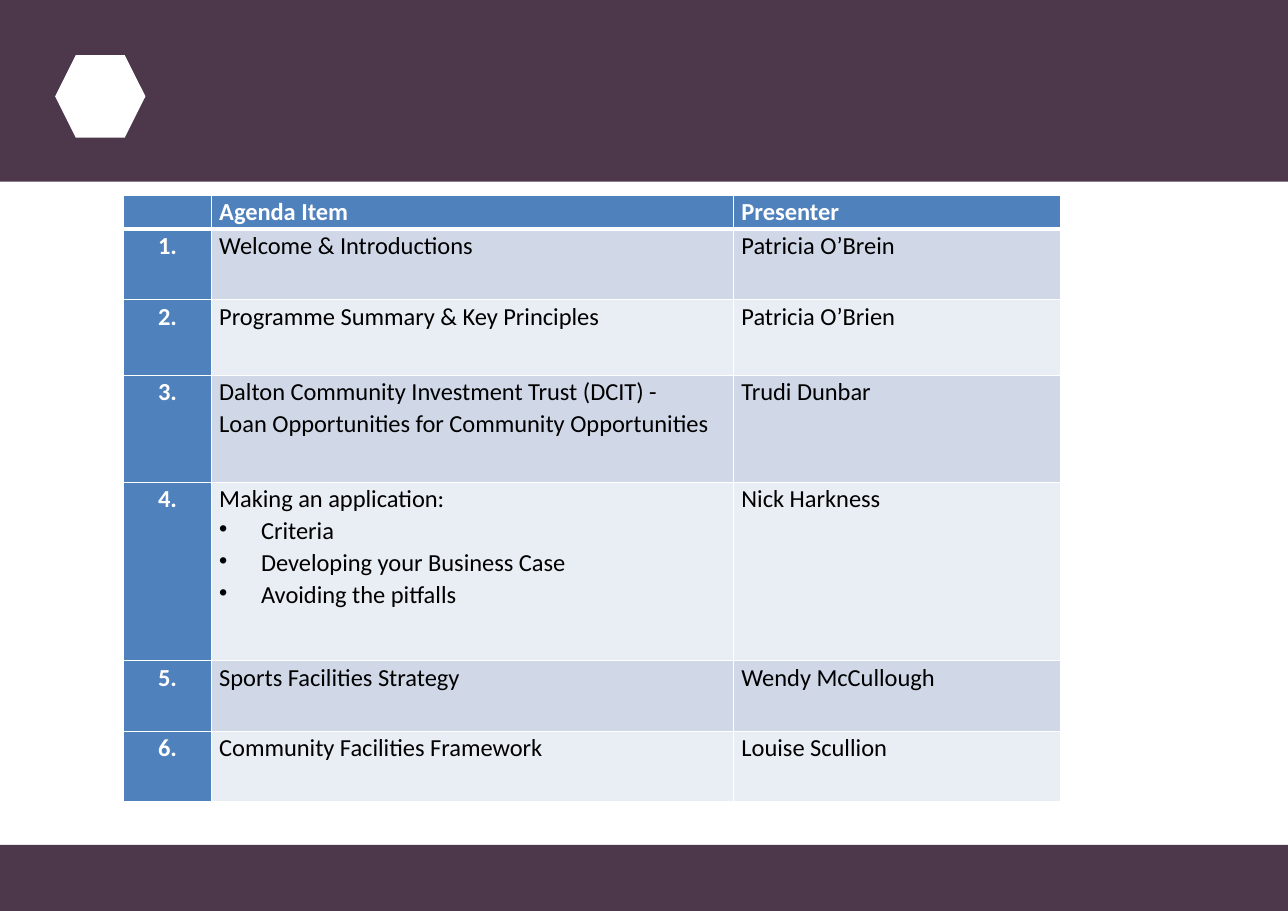
"""Build the agenda slide with its purple bands and presenter table."""
from dataclasses import dataclass
from typing import NamedTuple

from lxml import etree
from pptx import Presentation
from pptx import util as u
from pptx.dml.color import RGBColor
from pptx.enum import shapes, text
from pptx.oxml.ns import qn


@dataclass(frozen=True)
class Theme:
    plum: str = "4C374B"
    blue: str = "4F81BD"
    dark_row: str = "D0D8E8"
    light_row: str = "E9EDF4"
    white: str = "FFFFFF"
    black: str = "000000"
    font: str = "Calibri"
    size: int = 16
    line_spacing: float = 1.07
    thin: int = 1
    thick: int = 3


class Block(NamedTuple):
    preset: shapes.MSO_SHAPE
    left: float
    top: float
    width: float
    height: float
    color: str


class AgendaItem(NamedTuple):
    lines: list[str]
    presenter: str
    height: float
    bullets: list[str] = []


THEME = Theme()
WIDTH, HEIGHT = 11.69, 8.27
HEADER_HEIGHT = 0.31
COLUMN_WIDTHS = [0.8, 4.74, 2.97]

BLOCKS = [
    Block(shapes.MSO_SHAPE.RECTANGLE, 0, 0, WIDTH, 1.65, THEME.plum),
    Block(shapes.MSO_SHAPE.HEXAGON, 0.5, 0.5, 0.82, 0.75, THEME.white),
    Block(shapes.MSO_SHAPE.RECTANGLE, 0, 7.67, WIDTH, 0.6, THEME.plum),
]

AGENDA = [
    AgendaItem(["Welcome & Introductions"], "Patricia O’Brein", 0.64),
    AgendaItem(["Programme Summary & Key Principles"], "Patricia O’Brien", 0.69),
    AgendaItem(
        ["Dalton Community Investment Trust (DCIT) -",
         "Loan Opportunities for Community Opportunities"],
        "Trudi Dunbar", 0.97),
    AgendaItem(
        ["Making an application:"], "Nick Harkness", 1.62,
        ["Criteria", "Developing your Business Case", "Avoiding the pitfalls"]),
    AgendaItem(["Sports Facilities Strategy"], "Wendy McCullough", 0.64),
    AgendaItem(["Community Facilities Framework"], "Louise Scullion", 0.64),
]


def rgb(color: str) -> RGBColor:
    return RGBColor.from_string(color)


def draw_block(page, block: Block) -> None:
    box = page.shapes.add_shape(
        block.preset, *(u.Inches(length) for length in block[1:5]))
    box.shadow.inherit = False
    box.fill.solid()
    box.fill.fore_color.rgb = rgb(block.color)
    box.line.fill.background()


def add_border(cell, side: str, points: float) -> None:
    properties = cell._tc.get_or_add_tcPr()
    line = etree.SubElement(properties, qn(f"a:ln{side}"), w=str(u.Pt(points)))
    fill = etree.SubElement(line, qn("a:solidFill"))
    etree.SubElement(fill, qn("a:srgbClr"), val=THEME.white)


def add_bullet(para) -> None:
    properties = para._p.get_or_add_pPr()
    indent = u.Inches(0.38)
    properties.set("marL", str(indent))
    properties.set("indent", str(-indent))
    etree.SubElement(properties, qn("a:buChar"), char="•")


def fill_cell(cell, lines: list[str], color: str, row: int,
              strong: bool = False, centered: bool = False,
              bullets: list[str] | None = None) -> None:
    bullets = bullets or []
    cell.margin_left = cell.margin_right = u.Inches(0.07)
    cell.margin_top = cell.margin_bottom = 0
    for side in "LRTB":
        under_header = (row, side) in [(0, "B"), (1, "T")]
        add_border(cell, side, THEME.thick if under_header else THEME.thin)
    cell.fill.solid()
    cell.fill.fore_color.rgb = rgb(color)
    frame = cell.text_frame
    frame.text = "\n".join(lines + bullets)
    for index, para in enumerate(frame.paragraphs):
        if index >= len(lines):
            add_bullet(para)
        para.line_spacing = THEME.line_spacing
        para.alignment = text.PP_ALIGN.CENTER if centered else text.PP_ALIGN.LEFT
        para.font.name = THEME.font
        para.font.size = u.Pt(THEME.size)
        para.font.bold = strong
        para.font.color.rgb = rgb(THEME.white if strong else THEME.black)


def draw_agenda(page) -> None:
    heights = [HEADER_HEIGHT] + [item.height for item in AGENDA]
    table = page.shapes.add_table(
        len(heights), len(COLUMN_WIDTHS), u.Inches(1.12), u.Inches(1.77),
        u.Inches(sum(COLUMN_WIDTHS)), u.Inches(sum(heights))).table
    table.first_row = table.horz_banding = False
    for column, width in zip(table.columns, COLUMN_WIDTHS):
        column.width = u.Inches(width)
    for row, height in zip(table.rows, heights):
        row.height = u.Inches(height)
    for column, heading in enumerate(["", "Agenda Item", "Presenter"]):
        fill_cell(table.cell(0, column), [heading], THEME.blue, 0, strong=True)
    for row, item in enumerate(AGENDA, start=1):
        band = THEME.dark_row if row % 2 else THEME.light_row
        fill_cell(table.cell(row, 0), [f"{row}."], THEME.blue, row,
                  strong=True, centered=True)
        fill_cell(table.cell(row, 1), item.lines, band, row, bullets=item.bullets)
        fill_cell(table.cell(row, 2), [item.presenter], band, row)


def main() -> None:
    deck = Presentation()
    deck.slide_width, deck.slide_height = u.Inches(WIDTH), u.Inches(HEIGHT)
    page = deck.slides.add_slide(deck.slide_layouts[6])
    for block in BLOCKS:
        draw_block(page, block)
    draw_agenda(page)
    deck.save("out.pptx")


if __name__ == "__main__":
    main()
